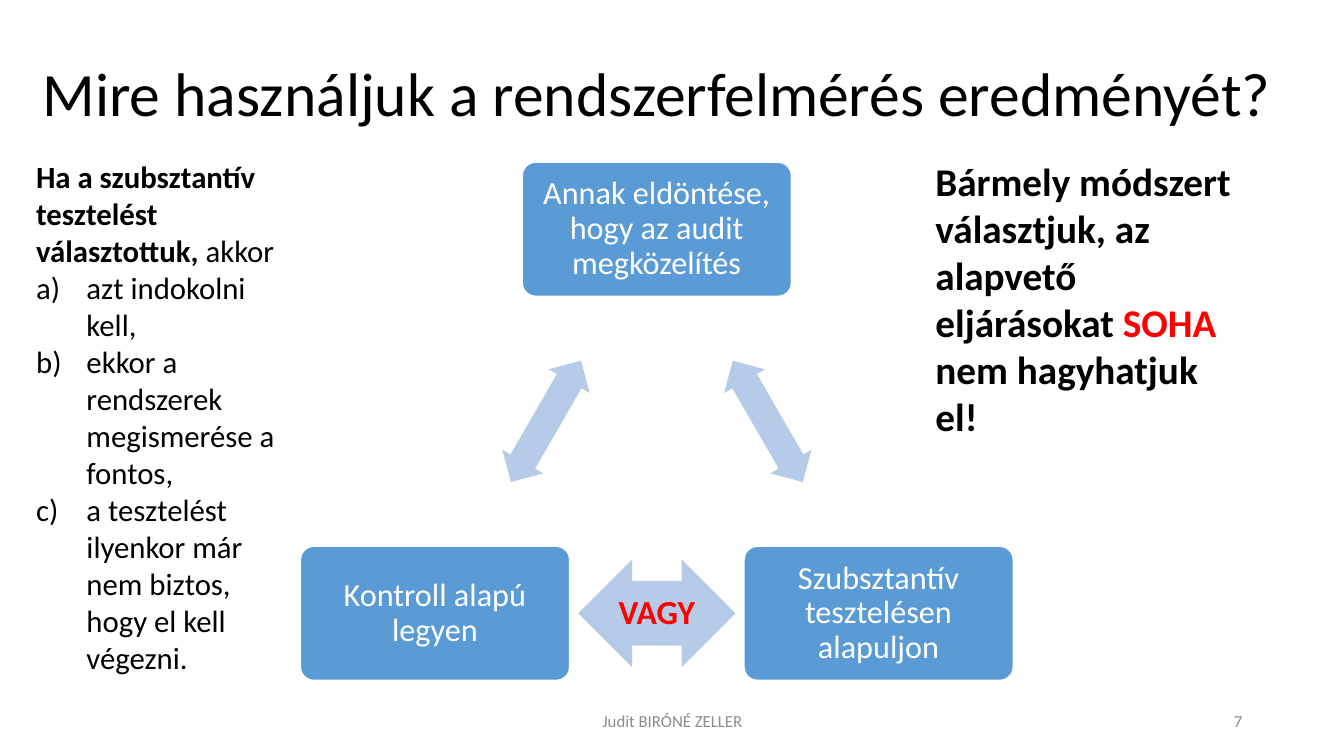
from lxml.etree import SubElement
from pptx import Presentation
from pptx.dml.color import RGBColor
from pptx.enum.shapes import MSO_SHAPE
from pptx.enum.text import MSO_ANCHOR, MSO_AUTO_SIZE, PP_ALIGN
from pptx.oxml.ns import qn
from pptx.util import Inches, Pt

# Content: text is a list of paragraphs, each a list of (text, bold, colour) runs
FONT = "Calibri"
BLACK, WHITE, RED, GREY = "000000", "FFFFFF", "FF0000", "8C8C8C"
CARD_BLUE, ARROW_BLUE = "5B9BD5", "B5CBE7"

TITLE = "Mire használjuk a rendszerfelmérés eredményét?"
# Card text with its column and row in the triangle
CARDS = [
    ("Annak eldöntése, hogy az audit megközelítés", 0, 0),
    ("Szubsztantív tesztelésen alapuljon", 1, 1),
    ("Kontroll alapú legyen", -1, 1),
]
# From card, to card, width, height, rotation, label
ARROWS = [
    (0, 1, 1.39, 0.47, 60, ""),
    (1, 2, 1.56, 1.07, 0, "VAGY"),
    (2, 0, 1.39, 0.47, 300, ""),
]
REMINDER = [
    [("Bármely módszert választjuk, az alapvető", True, BLACK)],
    [("eljárásokat ", True, BLACK), ("SOHA ", True, RED),
     ("nem hagyhatjuk el!", True, BLACK)],
]
CONDITION = [("Ha a szubsztantív tesztelést választottuk, ", True, BLACK),
             ("akkor", False, BLACK)]
DUTIES = [
    "azt indokolni kell,",
    "ekkor a rendszerek megismerése a fontos,",
    "a tesztelést ilyenkor már nem biztos, hogy el kell végezni.",
]
FOOTER, PAGE_NUMBER = "Judit BIRÓNÉ ZELLER", "7"

# Triangle geometry in inches
CARD_WIDTH, CARD_HEIGHT = 2.67, 1.33
CENTRE_X, COLUMN_STEP = 6.515, 2.2
TOP_ROW_Y, ROW_STEP = 2.275, 3.81


def colour(value):
    return RGBColor.from_string(value)


def set_frame(shape, inset=None, anchor=MSO_ANCHOR.MIDDLE):
    frame = shape.text_frame
    frame.word_wrap = True
    frame.auto_size = MSO_AUTO_SIZE.NONE
    frame.vertical_anchor = anchor
    if inset is not None:
        frame.margin_left = frame.margin_right = Inches(inset)
        frame.margin_top = frame.margin_bottom = Inches(inset)
    return frame


def write(frame, paragraphs, size, align=PP_ALIGN.LEFT, spacing=None):
    for index, runs in enumerate(paragraphs):
        paragraph = frame.add_paragraph() if index else frame.paragraphs[0]
        paragraph.alignment = align
        paragraph.line_spacing = spacing
        paragraph.font.name, paragraph.font.size = FONT, Pt(size)
        for text, bold, text_colour in runs:
            run = paragraph.add_run()
            run.text = text
            run.font.name, run.font.size = FONT, Pt(size)
            run.font.bold = bold
            run.font.color.rgb = colour(text_colour)


def add_text(box, paragraphs, size, align=PP_ALIGN.LEFT, anchor=MSO_ANCHOR.TOP):
    shape = slide.shapes.add_textbox(*map(Inches, box))
    frame = set_frame(shape, anchor=anchor)
    write(frame, paragraphs, size, align)
    return frame


def add_block(kind, centre, width, height, fill, adjustments):
    left, top = centre[0] - width / 2, centre[1] - height / 2
    shape = slide.shapes.add_shape(kind, *map(Inches, (left, top, width, height)))
    shape.shadow.inherit = False
    shape.fill.solid()
    shape.fill.fore_color.rgb = colour(fill)
    shape.line.fill.background()
    for index, value in enumerate(adjustments):
        shape.adjustments[index] = value
    return shape


def add_letter_bullet(paragraph):
    properties = paragraph._p.get_or_add_pPr()
    properties.set("marL", str(Inches(0.5)))
    properties.set("indent", str(Inches(-0.5)))
    SubElement(properties, qn("a:buFont"), typeface="+mj-lt")
    SubElement(properties, qn("a:buAutoNum"), type="alphaLcParenR")


presentation = Presentation()
presentation.slide_width, presentation.slide_height = Inches(13.33), Inches(7.5)
slide = presentation.slides.add_slide(presentation.slide_layouts[5])

# Title
title = slide.shapes.title
title.left, title.top, title.width, title.height = map(Inches, (0.32, 0.4, 12.56, 1.12))
write(set_frame(title), [[(TITLE, False, BLACK)]], 44, spacing=0.9)

# Cards of the triangle
centres = [(CENTRE_X + column * COLUMN_STEP, TOP_ROW_Y + row * ROW_STEP)
           for _, column, row in CARDS]
for (text, _, _), centre in zip(CARDS, centres):
    card = add_block(MSO_SHAPE.ROUNDED_RECTANGLE, centre, CARD_WIDTH, CARD_HEIGHT,
                     CARD_BLUE, [0.1])
    card.line.color.rgb = colour(WHITE)
    card.line.width = Pt(1)
    write(set_frame(card, 0.1), [[(text, False, WHITE)]], 23, PP_ALIGN.CENTER, 0.9)

# Arrows halfway between the cards
for start, end, width, height, rotation, label in ARROWS:
    middle = [(a + b) / 2 for a, b in zip(centres[start], centres[end])]
    arrow = add_block(MSO_SHAPE.LEFT_RIGHT_ARROW, middle, width, height,
                      ARROW_BLUE, [0.6, 0.5])
    arrow.rotation = rotation
    if label:
        write(set_frame(arrow, 0), [[(label, True, RED)]], 24, PP_ALIGN.CENTER, 0.9)

# Side texts
add_text((9.18, 1.51, 3.26, 2.93), REMINDER, 28)
duties = [[(duty, False, BLACK)] for duty in DUTIES]
left_frame = add_text((0.26, 1.52, 2.73, 5.28), [CONDITION] + duties, 22)
for paragraph in left_frame.paragraphs[1:]:
    add_letter_bullet(paragraph)

# Footer and page number
for left, width, text, align in [(4.42, 4.5, FOOTER, PP_ALIGN.CENTER),
                                 (9.42, 3, PAGE_NUMBER, PP_ALIGN.RIGHT)]:
    add_text((left, 6.95, width, 0.4), [[(text, False, GREY)]], 12, align,
             MSO_ANCHOR.MIDDLE)

presentation.save("out.pptx")
